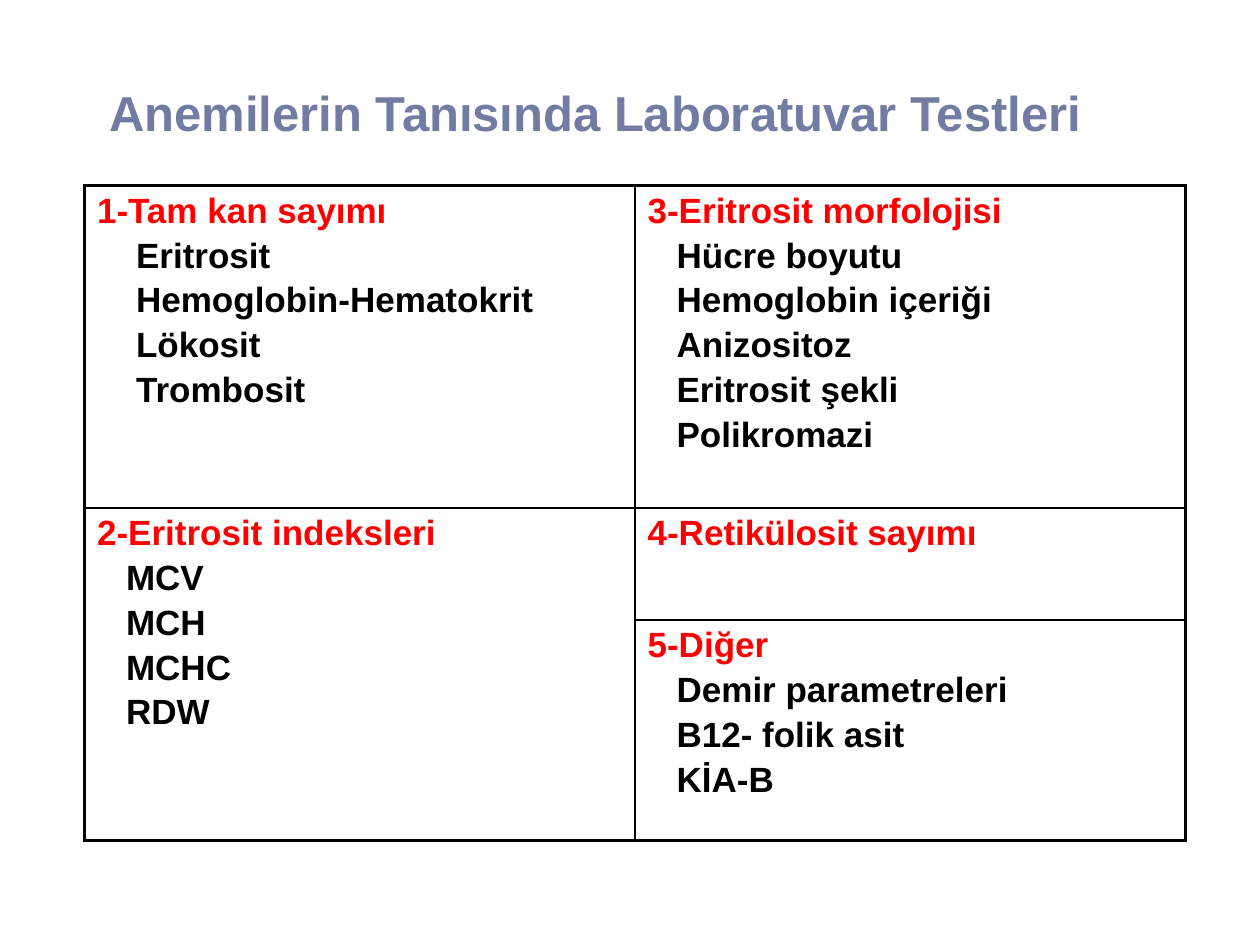
"""Build a slide listing the laboratory tests used to diagnose anemia."""
from dataclasses import dataclass

import pptx
import pptx.dml.color
import pptx.enum.text
import pptx.oxml
import pptx.oxml.ns
import pptx.util
from pptx.util import Inches


@dataclass(frozen=True)
class Theme:
    """Colours, font and type sizes."""
    font: str = "Arial"
    title: str = "727CA3"
    heading: str = "FF0000"
    body: str = "000000"
    line: str = "000000"
    fill: str = "FFFFFF"
    title_pt: float = 28
    body_pt: float = 20
    gap_pt: float = 3.3
    outer_pt: float = 2.25
    inner_pt: float = 1


THEME = Theme()
TITLE = "Anemilerin Tanısında Laboratuvar Testleri"
COL_WIDTHS = (4.37, 4.37)
ROW_HEIGHTS = (2.56, 0.89, 1.75)
GROUPS = (
    (0, 0, 0.31, "1-Tam kan sayımı",
     ("Eritrosit", "Hemoglobin-Hematokrit", "Lökosit", "Trombosit")),
    (0, 1, 0.23, "3-Eritrosit morfolojisi",
     ("Hücre boyutu", "Hemoglobin içeriği", "Anizositoz", "Eritrosit şekli", "Polikromazi")),
    (1, 0, 0.23, "2-Eritrosit indeksleri", ("MCV", "MCH", "MCHC", "RDW")),
    (1, 1, 0.23, "4-Retikülosit sayımı", ()),
    (2, 1, 0.23, "5-Diğer", ("Demir parametreleri", "B12- folik asit", "KİA-B")),
)


def rgb(color):
    """Turn a hex string into a colour."""
    return pptx.dml.color.RGBColor.from_string(color)


def write(p, text, size, color, indent=0):
    """Put bold text into a paragraph, indented from the left."""
    p.text = text
    p.font.name = THEME.font
    p.font.size = pptx.util.Pt(size)
    p.font.bold = True
    p.font.color.rgb = rgb(color)
    p._p.get_or_add_pPr().set("marL", str(Inches(indent)))


def add_title(s):
    """Add the slide title, resting on the bottom of its box."""
    sp = s.shapes.add_textbox(Inches(0.35), Inches(-0.27), Inches(9.02), Inches(1.44))
    tf = sp.text_frame
    tf.word_wrap = True
    tf.vertical_anchor = pptx.enum.text.MSO_ANCHOR.BOTTOM
    write(tf.paragraphs[0], TITLE, THEME.title_pt, THEME.title, 0.42)


def set_borders(cell, row, col):
    """Draw heavy lines on the table's outside and thin lines inside."""
    last_row = row + (cell.span_height if cell.is_merge_origin else 1)
    outer = {"L": col == 0, "R": col == len(COL_WIDTHS) - 1,
             "T": row == 0, "B": last_row == len(ROW_HEIGHTS)}
    tcPr = cell._tc.get_or_add_tcPr()
    for i, (side, is_outer) in enumerate(outer.items()):
        width = pptx.util.Pt(THEME.outer_pt if is_outer else THEME.inner_pt)
        tcPr.insert(i, pptx.oxml.parse_xml(
            f'<a:ln{side} {pptx.oxml.ns.nsdecls("a")} w="{width}"><a:solidFill>'
            f'<a:srgbClr val="{THEME.line}"/></a:solidFill></a:ln{side}>'))


def fill_cell(cell, indent, heading, items):
    """Write a red heading with its indented tests below."""
    cell.fill.solid()
    cell.fill.fore_color.rgb = rgb(THEME.fill)
    tf = cell.text_frame
    write(tf.paragraphs[0], heading, THEME.body_pt, THEME.heading)
    for item in items:
        p = tf.add_paragraph()
        write(p, item, THEME.body_pt, THEME.body, indent)
        p.space_before = pptx.util.Pt(THEME.gap_pt)


def add_tests(s):
    """Add the table of test groups."""
    table = s.shapes.add_table(
        len(ROW_HEIGHTS), len(COL_WIDTHS), Inches(0.67), Inches(1.47),
        Inches(sum(COL_WIDTHS)), Inches(sum(ROW_HEIGHTS))).table
    table.first_row = table.horz_banding = False
    for column, width in zip(table.columns, COL_WIDTHS):
        column.width = Inches(width)
    for row, height in zip(table.rows, ROW_HEIGHTS):
        row.height = Inches(height)
    table.cell(1, 0).merge(table.cell(2, 0))
    for row, col, indent, heading, items in GROUPS:
        cell = table.cell(row, col)
        fill_cell(cell, indent, heading, items)
        set_borders(cell, row, col)


def main():
    """Build and save the slide."""
    prs = pptx.Presentation()
    prs.slide_width, prs.slide_height = Inches(10), Inches(7.5)
    s = prs.slides.add_slide(prs.slide_layouts[6])
    add_title(s)
    add_tests(s)
    prs.save("out.pptx")


if __name__ == "__main__":
    main()
